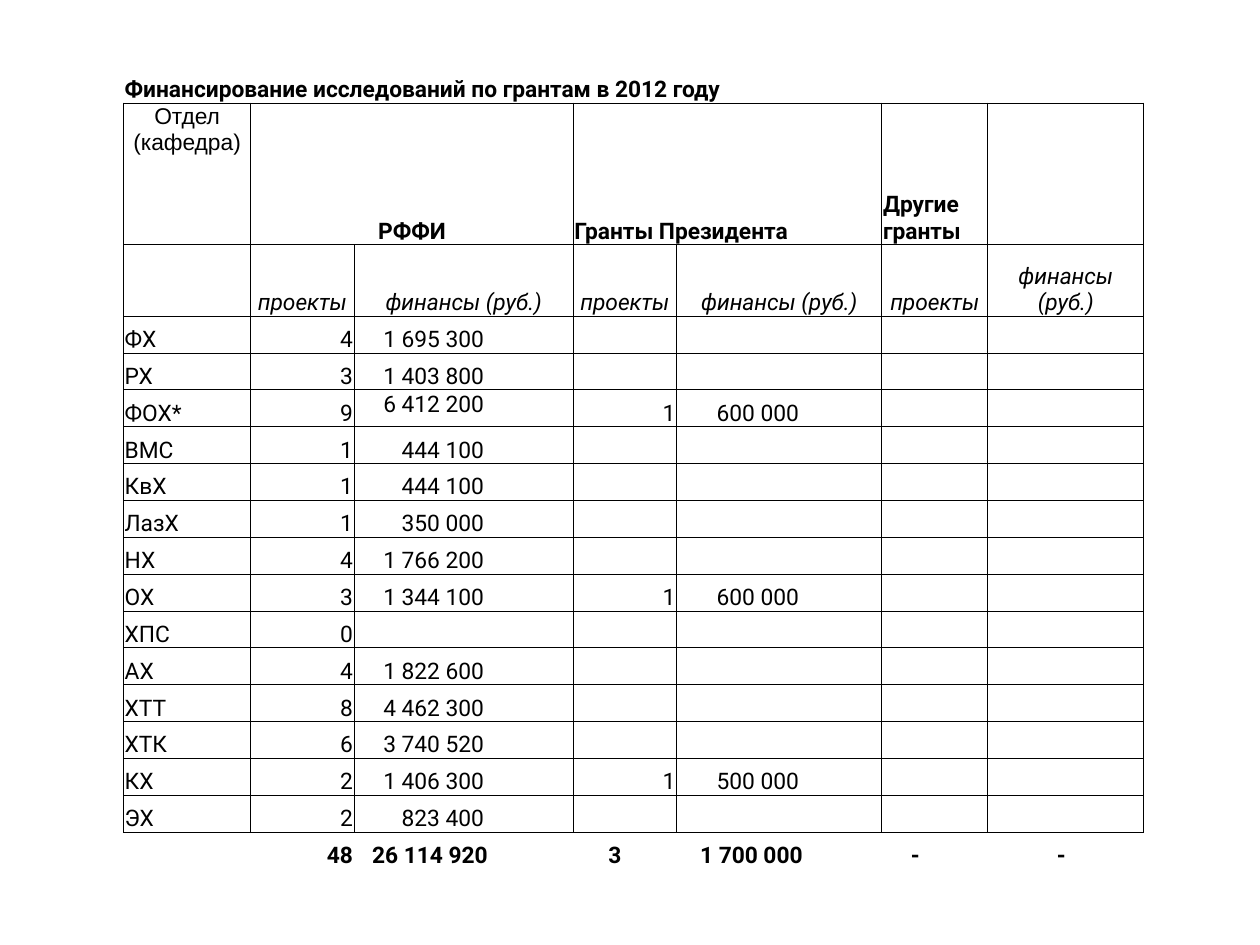
from dataclasses import dataclass
from typing import Optional

from lxml.etree import SubElement
from pptx import Presentation
from pptx.dml.color import RGBColor
from pptx.enum.text import MSO_ANCHOR as Anchor, PP_ALIGN as Align
from pptx.oxml.ns import qn
from pptx.util import Inches, Pt


@dataclass(frozen=True)
class Theme:
    ink: str = "000000"
    body_font: str = "Roboto"
    corner_font: str = "Arial"
    text_size: float = 13
    rule_width: float = 0.5
    inset: float = 0.01


@dataclass(frozen=True)
class Entry:
    text: str = ""
    align: Align = Align.LEFT
    anchor: Anchor = Anchor.BOTTOM
    bold: bool = False
    italic: bool = False
    font: str = Theme.body_font
    left: float = Theme.inset
    right: float = Theme.inset
    span: int = 1


@dataclass(frozen=True)
class Department:
    name: str
    projects: int
    funds: str
    president_funds: Optional[str] = None


THEME = Theme()
SLIDE_WIDTH, SLIDE_HEIGHT = 10, 7.5
TABLE_LEFT, TABLE_TOP = 0.098 * SLIDE_WIDTH, 0.07 * SLIDE_HEIGHT
TABLE_WIDTH, TABLE_HEIGHT = 0.81 * SLIDE_WIDTH, 0.85 * SLIDE_HEIGHT
COLUMN_SHARES = [101, 82, 174, 82, 163, 84, 124]
HEADER_ROW_UNITS = [1, 3.84, 1.94]
FUNDS_MARGIN, PRESIDENT_MARGIN = 0.71, 0.66

DEPARTMENTS = [
    Department("ФХ", 4, "1 695 300"),
    Department("РХ", 3, "1 403 800"),
    Department("ФОХ*", 9, "6 412 200", "600 000"),
    Department("ВМС", 1, "444 100"),
    Department("КвХ", 1, "444 100"),
    Department("ЛазХ", 1, "350 000"),
    Department("НХ", 4, "1 766 200"),
    Department("ОХ", 3, "1 344 100", "600 000"),
    Department("ХПС", 0, ""),
    Department("АХ", 4, "1 822 600"),
    Department("ХТТ", 8, "4 462 300"),
    Department("ХТК", 6, "3 740 520"),
    Department("КХ", 2, "1 406 300", "500 000"),
    Department("ЭХ", 2, "823 400"),
]


def number(text: str, margin: float = THEME.inset, bold: bool = False,
           anchor: Anchor = Anchor.BOTTOM) -> Entry:
    return Entry(text, Align.RIGHT, anchor, bold, right=margin)


def header_rows() -> list[dict[int, Entry]]:
    title = {0: Entry("Финансирование исследований по грантам в 2012 году",
                      bold=True, span=7)}
    sources = {
        0: Entry("Отдел (кафедра)", Align.CENTER, Anchor.TOP, font=THEME.corner_font),
        1: Entry("РФФИ", Align.CENTER, bold=True, span=2),
        3: Entry("Гранты Президента", bold=True, span=2),
        5: Entry("Другие гранты", bold=True),
    }
    measures = {
        column: Entry("проекты" if column % 2 else "финансы (руб.)",
                      Align.CENTER, italic=True)
        for column in range(1, 7)
    }
    return [title, sources, measures]


def department_row(department: Department) -> dict[int, Entry]:
    funds_anchor = Anchor.TOP if department.name == "ФОХ*" else Anchor.BOTTOM
    row = {
        0: Entry(department.name),
        1: number(str(department.projects)),
        2: number(department.funds, FUNDS_MARGIN, anchor=funds_anchor),
    }
    if department.president_funds:
        row[3] = number("1")
        row[4] = number(department.president_funds, PRESIDENT_MARGIN)
    return row


def total_row() -> dict[int, Entry]:
    return {
        1: number("48", bold=True),
        2: number("26 114 920", FUNDS_MARGIN - 0.03, bold=True),
        3: Entry("3", bold=True, left=0.28),
        4: number("1 700 000", PRESIDENT_MARGIN - 0.03, bold=True),
        5: Entry("-", bold=True, left=0.23),
        6: Entry("-", bold=True, left=0.55),
    }


def draw_borders(cell, ruled_sides: str) -> None:
    properties = cell._tc.get_or_add_tcPr()
    for side in "LRTB":
        line = SubElement(properties, qn(f"a:ln{side}"), w=str(Pt(THEME.rule_width)))
        if side in ruled_sides:
            fill = SubElement(line, qn("a:solidFill"))
            SubElement(fill, qn("a:srgbClr"), val=THEME.ink)
        else:
            SubElement(line, qn("a:noFill"))
    cell.fill.background()


def write_entry(cell, entry: Entry) -> None:
    cell.margin_left, cell.margin_right = Inches(entry.left), Inches(entry.right)
    cell.margin_top, cell.margin_bottom = Inches(THEME.inset), 0
    cell.vertical_anchor = entry.anchor
    paragraph = cell.text_frame.paragraphs[0]
    paragraph.alignment = entry.align
    if not entry.text:
        paragraph._p.get_or_add_endParaRPr().set("sz", str(int(THEME.text_size * 100)))
        return
    paragraph.text = entry.text
    font = paragraph.runs[0].font
    font.name, font.size = entry.font, Pt(THEME.text_size)
    font.bold, font.italic = entry.bold, entry.italic
    font.color.rgb = RGBColor.from_string(THEME.ink)


def draw_table(slide, rows: list[dict[int, Entry]]) -> None:
    column_count = len(COLUMN_SHARES)
    table = slide.shapes.add_table(
        len(rows), column_count, Inches(TABLE_LEFT), Inches(TABLE_TOP),
        Inches(TABLE_WIDTH), Inches(TABLE_HEIGHT)).table
    table.first_row = table.horz_banding = False
    for column, share in zip(table.columns, COLUMN_SHARES):
        column.width = Inches(TABLE_WIDTH * share / sum(COLUMN_SHARES))
    row_units = HEADER_ROW_UNITS + [1] * (len(rows) - len(HEADER_ROW_UNITS))
    for row, units in zip(table.rows, row_units):
        row.height = Inches(TABLE_HEIGHT * units / sum(row_units))
    ruled_sides = {0: "B", len(rows) - 1: "T"}
    for row_index, entries in enumerate(rows):
        for column_index in range(column_count):
            cell = table.cell(row_index, column_index)
            entry = entries.get(column_index, Entry())
            draw_borders(cell, ruled_sides.get(row_index, "LRTB"))
            write_entry(cell, entry)
            if entry.span > 1:
                cell.merge(table.cell(row_index, column_index + entry.span - 1))


def main() -> None:
    presentation = Presentation()
    presentation.slide_width = Inches(SLIDE_WIDTH)
    presentation.slide_height = Inches(SLIDE_HEIGHT)
    slide = presentation.slides.add_slide(presentation.slide_layouts[6])
    draw_table(slide, [*header_rows(), *map(department_row, DEPARTMENTS), total_row()])
    presentation.save("out.pptx")


if __name__ == "__main__":
    main()
